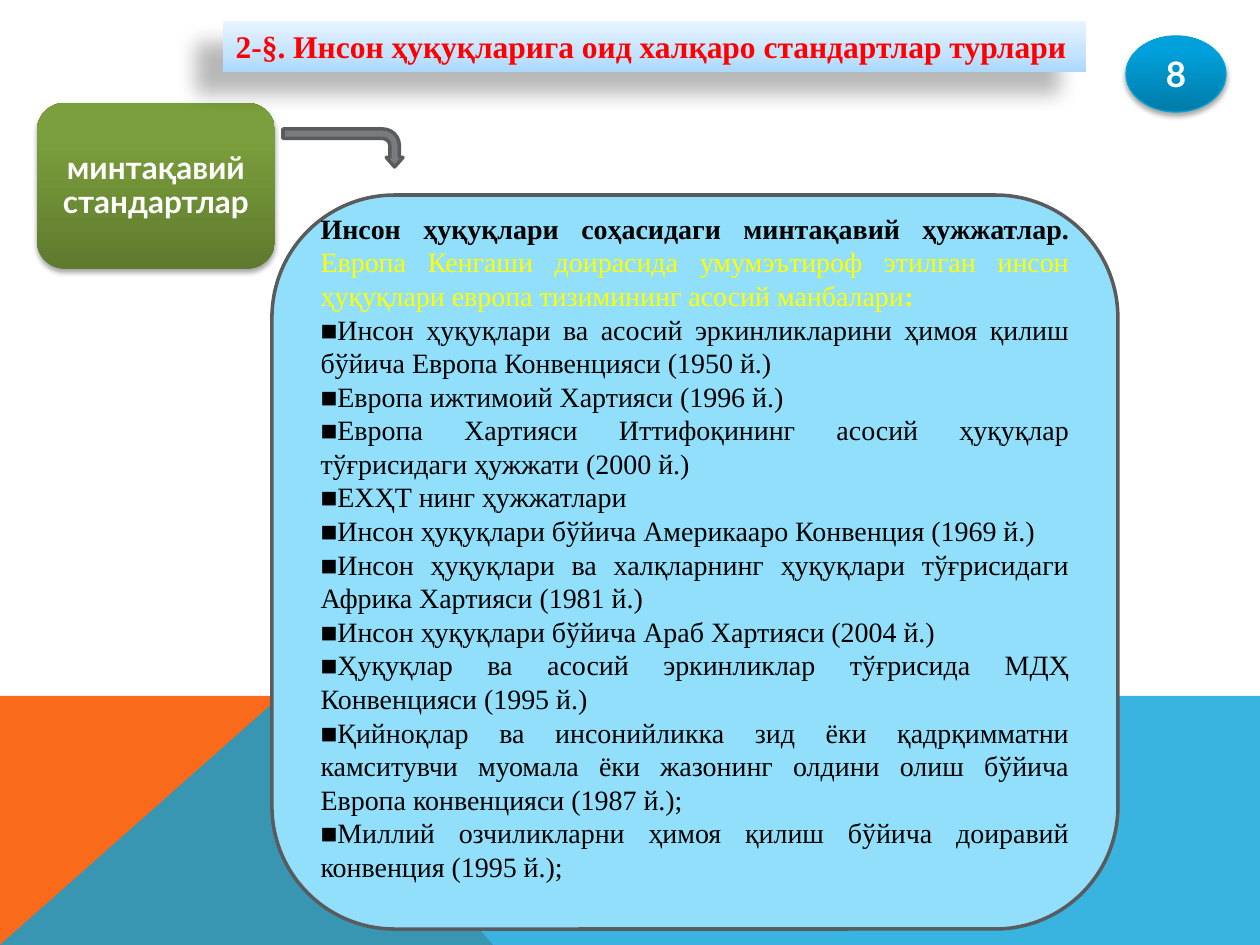
from lxml import etree
from pptx import Presentation
from pptx.dml.color import RGBColor
from pptx.enum.shapes import MSO_SHAPE
from pptx.enum.text import MSO_ANCHOR, MSO_AUTO_SIZE, PP_ALIGN
from pptx.oxml import parse_xml
from pptx.oxml.ns import nsdecls, qn
from pptx.util import Pt

OVAL, ROUND, BENT = MSO_SHAPE.OVAL, MSO_SHAPE.ROUNDED_RECTANGLE, MSO_SHAPE.BENT_ARROW
CENTER, JUSTIFY = PP_ALIGN.CENTER, PP_ALIGN.JUSTIFY
TOP, MIDDLE = MSO_ANCHOR.TOP, MSO_ANCHOR.MIDDLE
PX = 914400 / 126

THEME = {
    "sans": "Lato", "serif": "Times New Roman",
    "number_size": 20, "head_size": 18, "list_size": 16,
    "white": "FFFFFF", "black": "000000", "red": "FF0000", "yellow": "FFFF00",
    "orange": "F96A1B", "blue": "08A1D9", "panel": "91DFFB",
    "outline": "5A5B5D", "arrow": "797B7E", "badge_line": "03A0D9",
    "badge": [(0, "007BA8"), (80, "00A0DA"), (100, "00A0DB")],
    "card": [(0, "5F7A2E"), (80, "7B9F3C"), (100, "7CA13B")],
    "title": [(0, "ABD8FF"), (35, "C3E3FF"), (100, "E8F4FF")],
}


def paint(s, stops, blur, dist, angle, alpha):
    """Vertical gradient, no line and an outer shadow."""
    s.fill.background()
    s.line.fill.background()
    gs = "".join(f'<a:gs pos="{pos * 1000}"><a:srgbClr val="{c}"/></a:gs>' for pos, c in stops)
    grad = parse_xml(f'<a:gradFill {nsdecls("a")} rotWithShape="1"><a:gsLst>{gs}</a:gsLst>'
                     '<a:lin ang="16200000" scaled="0"/></a:gradFill>')
    pr = s._element.spPr
    pr.replace(pr.find(qn("a:noFill")), grad)
    s.shadow.inherit = False
    shadow = etree.SubElement(pr.find(qn("a:effectLst")), qn("a:outerShdw"),
                              blurRad=str(Pt(blur)), dist=str(Pt(dist)),
                              dir=str(angle * 60000), algn="ctr", rotWithShape="0")
    color = etree.SubElement(shadow, qn("a:srgbClr"), val=THEME["black"])
    etree.SubElement(color, qn("a:alpha"), val=str(alpha * 1000))


def style(p, font, size, color, bold, align):
    """Format a paragraph and all of its runs."""
    p.alignment = align
    p.space_before = Pt(0)
    for r in p.runs:
        r.font.name, r.font.size, r.font.bold = THEME[font], Pt(THEME[size]), bold
        r.font.color.rgb = RGBColor.from_string(THEME[color])


prs = Presentation()
prs.slide_width, prs.slide_height = round(1260 * PX), round(945 * PX)
slide = prs.slides.add_slide(prs.slide_layouts[1])
shapes = slide.shapes
title, body = shapes.title, slide.placeholders[1]

# Coloured corner bands
bands = [("orange", [(0, 945), (0, 696), (281, 696), (493, 945)]),
         ("blue", [(0, 945), (281, 696), (1260, 696), (1260, 945)])]
for color, points in bands:
    builder = shapes.build_freeform(*points[0], scale=PX)
    builder.add_line_segments(points[1:], close=True)
    s = builder.convert_to_shape()
    s.fill.solid()
    s.fill.fore_color.rgb = RGBColor.from_string(THEME[color])
    s.line.fill.background()
    s.shadow.inherit = False
clr = s._element.spPr.find(qn("a:solidFill"))[0]
etree.SubElement(clr, qn("a:alpha"), val="80000")

# Number badge and topic card
labels = [
    (OVAL, (1126, 36, 100, 76), "8", "number_size", "badge"),
    (ROUND, (37, 103, 238, 166), "минтақавий стандартлар", "head_size", "card"),
]
for kind, box, text, size, stops in labels:
    s = shapes.add_shape(kind, *[round(v * PX) for v in box])
    paint(s, THEME[stops], 3.1, 1.8, 90, 35)
    tf = s.text_frame
    tf.text = text
    tf.word_wrap = True
    tf.vertical_anchor = MIDDLE
    style(tf.paragraphs[0], "sans", size, "white", True, CENTER)
    if kind == OVAL:
        s.line.color.rgb = RGBColor.from_string(THEME["badge_line"])
        s.line.width = Pt(0.75)
    else:
        tf.margin_left = tf.margin_right = round(9 * PX)
        tf.paragraphs[0].line_spacing = 0.9

# List panel and bent arrow
outlined = [(ROUND, (272, 195, 846, 734), "panel", [0.167], 0),
            (BENT, (324, 88, 38, 120), "arrow", [0.25, 0.221, 0.25, 0.438], 90)]
for kind, box, color, adjustments, rotation in outlined:
    s = shapes.add_shape(kind, *[round(v * PX) for v in box])
    for i, value in enumerate(adjustments):
        s.adjustments[i] = value
    s.rotation = rotation
    s.fill.solid()
    s.fill.fore_color.rgb = RGBColor.from_string(THEME[color])
    s.line.color.rgb = RGBColor.from_string(THEME["outline"])
    s.line.width = Pt(2)
    s.shadow.inherit = False

# Title and body placeholders, placed above the panel
for s, box in [(title, (223, 21, 863, 51)), (body, (308, 205, 774, 714))]:
    s.left, s.top, s.width, s.height = [round(v * PX) for v in box]
    s.text_frame.word_wrap = True
    s.text_frame.auto_size = MSO_AUTO_SIZE.NONE
    s.text_frame.vertical_anchor = TOP
    shapes._spTree.append(s._element)

title.text_frame.text = "2-§. Инсон ҳуқуқларига оид халқаро стандартлар турлари"
style(title.text_frame.paragraphs[0], "serif", "head_size", "red", True, JUSTIFY)
paint(title, THEME["title"], 11.8, 19.7, 141, 28)

# Documents list
lead = [("Инсон ҳуқуқлари соҳасидаги минтақавий ҳужжатлар. ", "black", True),
        ("Европа Кенгаши доирасида умумэътироф этилган инсон ҳуқуқлари европа "
         "тизимининг асосий манбалари", "yellow", False),
        (":", "yellow", True)]
documents = [
    "Инсон ҳуқуқлари ва асосий эркинликларини ҳимоя қилиш бўйича Европа Конвенцияси (1950 й.)",
    "Европа ижтимоий Хартияси (1996 й.)",
    "Европа Хартияси Иттифоқининг асосий ҳуқуқлар тўғрисидаги ҳужжати (2000 й.)",
    "ЕХҲТ нинг ҳужжатлари",
    "Инсон ҳуқуқлари бўйича Америкааро Конвенция (1969 й.)",
    "Инсон ҳуқуқлари ва халқларнинг ҳуқуқлари тўғрисидаги Африка Хартияси (1981 й.)",
    "Инсон ҳуқуқлари бўйича Араб Хартияси (2004 й.)",
    "Ҳуқуқлар ва асосий эркинликлар тўғрисида МДҲ Конвенцияси (1995 й.)",
    "Қийноқлар ва инсонийликка зид ёки қадрқимматни камситувчи муомала ёки жазонинг "
    "олдини олиш бўйича Европа конвенцияси (1987 й.);",
    "Миллий озчиликларни ҳимоя қилиш бўйича доиравий конвенция (1995 й.);",
]
tf = body.text_frame
tf.text = "\n".join([""] + ["■" + d for d in documents])
for text, color, bold in lead:
    tf.paragraphs[0].add_run().text = text
for p in tf.paragraphs:
    style(p, "serif", "list_size", "black", False, JUSTIFY)
    pPr = p._p.get_or_add_pPr()
    pPr.set("marL", "0")
    pPr.set("indent", "0")
    etree.SubElement(pPr, qn("a:buNone"))
for r, (text, color, bold) in zip(tf.paragraphs[0].runs, lead):
    r.font.bold = bold
    r.font.color.rgb = RGBColor.from_string(THEME[color])

prs.save("out.pptx")
